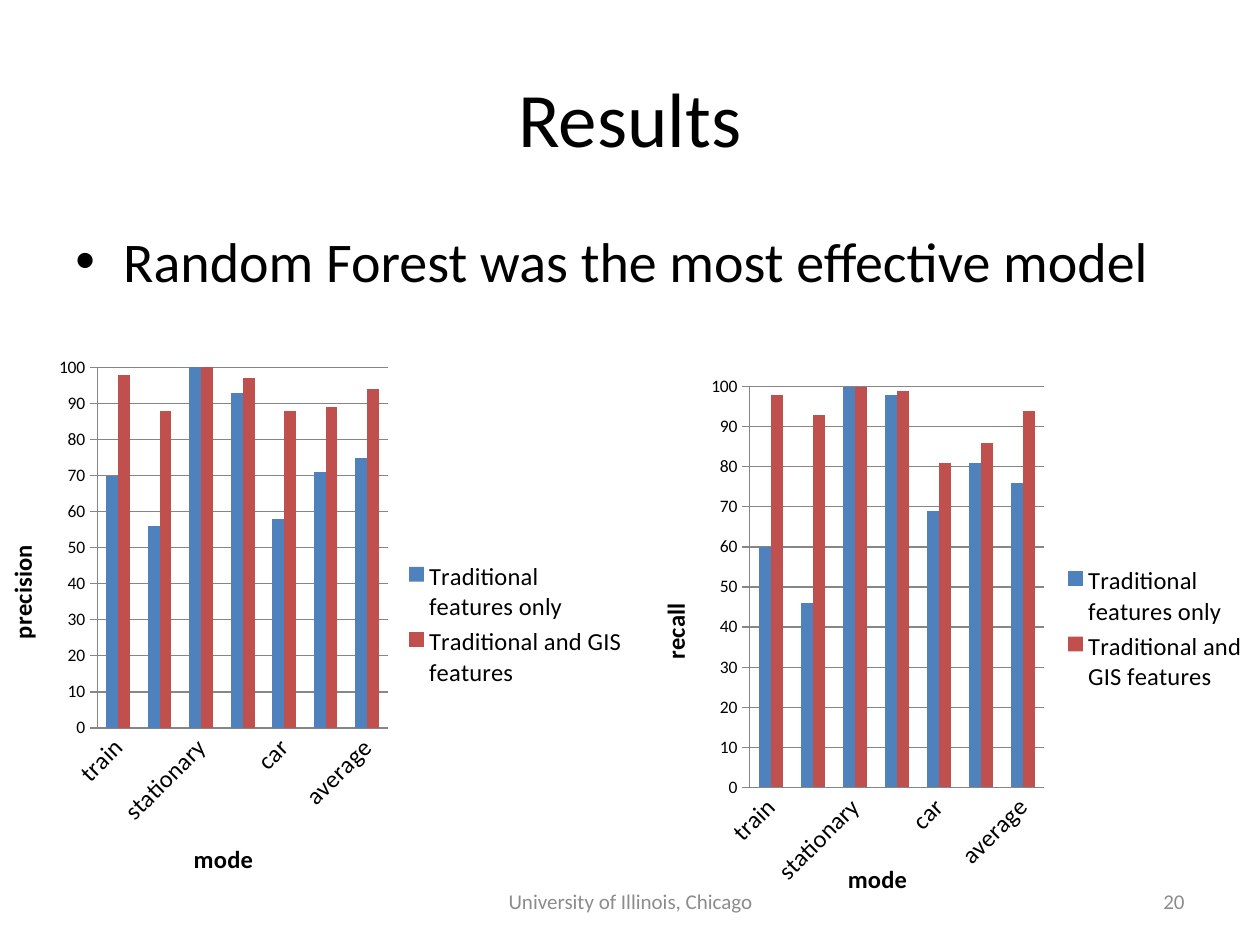
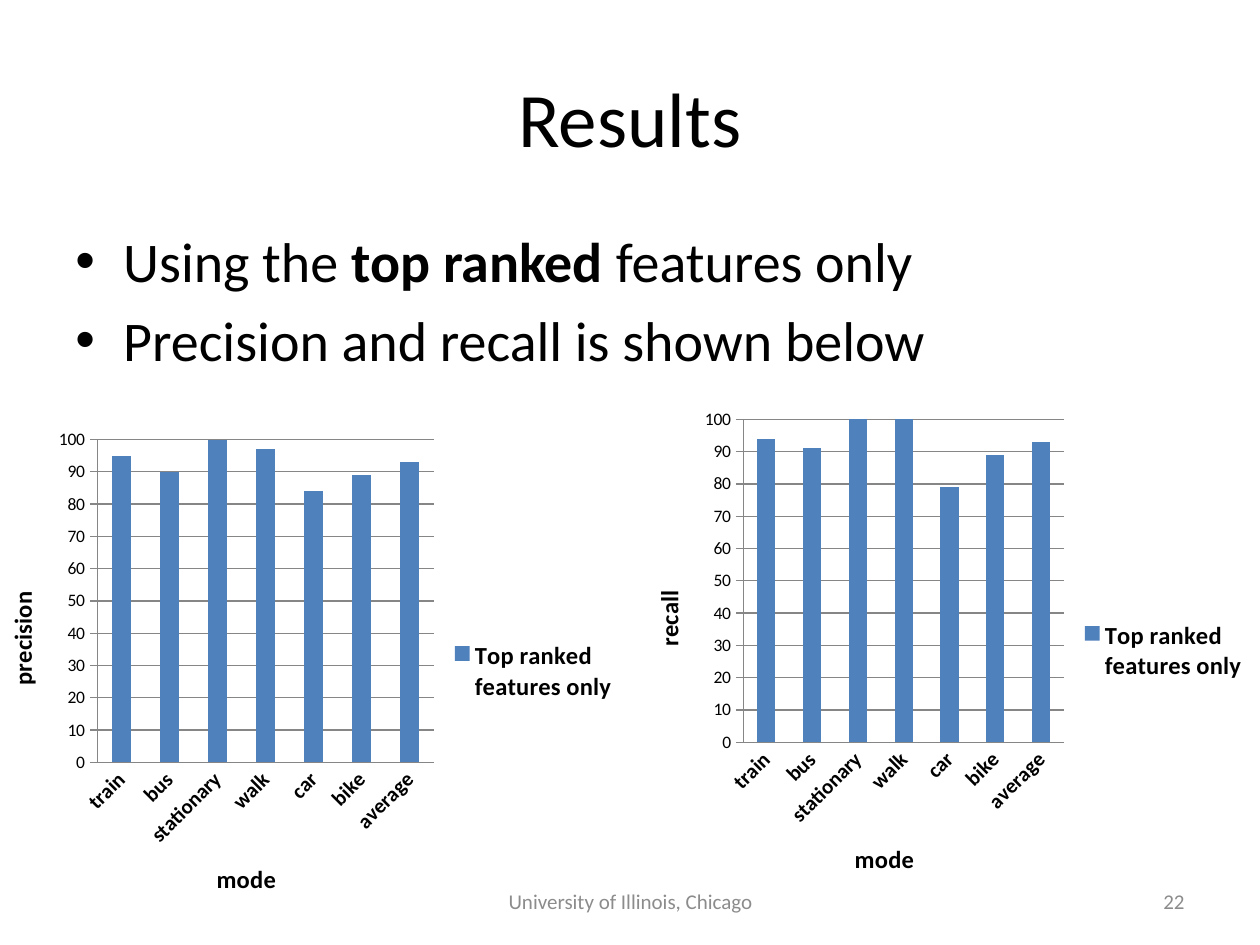
from dataclasses import dataclass

from lxml import etree
from pptx import Presentation
from pptx.chart.data import CategoryChartData
from pptx.dml.color import RGBColor
from pptx.enum.chart import XL_CHART_TYPE, XL_LEGEND_POSITION, XL_TICK_MARK
from pptx.enum.text import MSO_ANCHOR, PP_ALIGN
from pptx.oxml.ns import qn
from pptx.util import Inches, Pt

COLUMNS = XL_CHART_TYPE.COLUMN_CLUSTERED
LEGEND_RIGHT = XL_LEGEND_POSITION.RIGHT
TICK_NONE, TICK_OUTSIDE = XL_TICK_MARK.NONE, XL_TICK_MARK.OUTSIDE
TOP, MIDDLE = MSO_ANCHOR.TOP, MSO_ANCHOR.MIDDLE
LEFT, CENTER, RIGHT = PP_ALIGN.LEFT, PP_ALIGN.CENTER, PP_ALIGN.RIGHT


@dataclass(frozen=True)
class Theme:
    font: str = "Calibri"
    text: RGBColor = RGBColor(0, 0, 0)
    muted: RGBColor = RGBColor(0x8C, 0x8C, 0x8C)
    grid: RGBColor = RGBColor(0x86, 0x86, 0x86)
    series: tuple = (RGBColor(0x4F, 0x81, 0xBD), RGBColor(0xC0, 0x50, 0x4D))
    title_size: int = 44
    body_size: int = 32
    footer_size: int = 12
    chart_size: int = 10
    label_size: int = 14
    small_label_size: int = 12


THEME = Theme()
TITLE = "Results"
FOOTER = "University of Illinois, Chicago"
MODES = ["train", "bus", "stationary", "walk", "car", "bike", "average"]
TRADITIONAL = "Traditional features only"
WITH_GIS = "Traditional and GIS features"
TOP_RANKED = "Top ranked features only"

SLIDES = [
    {
        "number": "20",
        "bullets": [[("Random Forest was the most effective model", False)]],
        "category_size": THEME.label_size,
        "bold_labels": False,
        "charts": [
            {
                "measure": "precision",
                "box": (-0.17, 2.75, 5.25, 4.42),
                "series": {
                    TRADITIONAL: [70, 56, 100, 93, 58, 71, 75],
                    WITH_GIS: [98, 88, 100, 97, 88, 89, 94],
                },
            },
            {
                "measure": "recall",
                "box": (5, 2.83, 5, 4.33),
                "plot": {"x": 0.19, "y": 0.055, "w": 0.467, "h": 0.735},
                "series": {
                    TRADITIONAL: [60, 46, 100, 98, 69, 81, 76],
                    WITH_GIS: [98, 93, 100, 99, 81, 86, 94],
                },
            },
        ],
    },
    {
        "number": "22",
        "bullets": [
            [("Using the ", False), ("top ranked ", True), ("features only", False)],
            [("Precision and recall is shown below", False)],
        ],
        "category_size": THEME.small_label_size,
        "bold_labels": True,
        "charts": [
            {
                "measure": "precision",
                "box": (-0.17, 3.33, 5.17, 4),
                "series": {TOP_RANKED: [95, 90, 100, 97, 84, 89, 93]},
            },
            {
                "measure": "recall",
                "box": (4.96, 3.17, 5.04, 4),
                "series": {TOP_RANKED: [94, 91, 100, 100, 79, 89, 93]},
            },
        ],
    },
]


def place(shape, box):
    shape.left, shape.top, shape.width, shape.height = map(Inches, box)


def style_font(font, size, color=THEME.text, bold=False):
    font.name = THEME.font
    font.size = Pt(size)
    font.bold = bold
    font.color.rgb = color


def add_run(paragraph, text, size, color=THEME.text, bold=False):
    run = paragraph.add_run()
    run.text = text
    style_font(run.font, size, color, bold)


def add_text_box(slide, box, anchor):
    text_frame = slide.shapes.add_textbox(*map(Inches, box)).text_frame
    text_frame.word_wrap = True
    text_frame.vertical_anchor = anchor
    return text_frame


def add_title(slide):
    title = slide.shapes.title
    place(title, (0.5, 0.3, 9, 1.25))
    title.text_frame.vertical_anchor = MIDDLE
    paragraph = title.text_frame.paragraphs[0]
    paragraph.alignment = CENTER
    add_run(paragraph, TITLE, THEME.title_size)


def add_bullets(slide, bullets):
    text_frame = add_text_box(slide, (0.5, 1.75, 9, 4.95), TOP)
    for index, runs in enumerate(bullets):
        paragraph = text_frame.add_paragraph() if index else text_frame.paragraphs[0]
        paragraph.alignment = LEFT
        paragraph.space_before = Pt(THEME.body_size * 0.2)
        properties = paragraph._p.get_or_add_pPr()
        properties.set("marL", str(Inches(0.38)))
        properties.set("indent", str(-Inches(0.38)))
        etree.SubElement(properties, qn("a:buFont")).set("typeface", "Arial")
        etree.SubElement(properties, qn("a:buChar")).set("char", "•")
        for text, bold in runs:
            add_run(paragraph, text, THEME.body_size, bold=bold)


def add_footer(slide, number):
    for text, left, width, alignment in (
        (number, 7.17, 2.33, RIGHT),
        (FOOTER, 3.42, 3.17, CENTER),
    ):
        paragraph = add_text_box(slide, (left, 6.95, width, 0.4), MIDDLE).paragraphs[0]
        paragraph.alignment = alignment
        add_run(paragraph, text, THEME.footer_size, THEME.muted)


def rotate_text(text_element, degrees):
    body = text_element.find(qn("a:bodyPr"))
    body.set("rot", str(degrees * 60000))
    body.set("vert", "horz")


def style_line(line):
    line.color.rgb = THEME.grid
    line.width = Pt(0.75)


def style_axis(axis, title, label_size, bold, tick_mark):
    title_frame = axis.axis_title.text_frame
    add_run(title_frame.paragraphs[0], title, THEME.label_size, bold=True)
    style_font(axis.tick_labels.font, label_size, bold=bold)
    axis.major_tick_mark = tick_mark
    axis.minor_tick_mark = TICK_NONE
    style_line(axis.format.line)
    return title_frame


def set_plot_layout(plot, position):
    plot_area = plot._element.getparent()
    for old_layout in plot_area.findall(qn("c:layout")):
        plot_area.remove(old_layout)
    layout = etree.Element(qn("c:layout"))
    manual = etree.SubElement(layout, qn("c:manualLayout"))
    settings = {"layoutTarget": "inner", "xMode": "edge", "yMode": "edge", **position}
    for name, value in settings.items():
        etree.SubElement(manual, qn(f"c:{name}")).set("val", str(value))
    plot_area.insert(0, layout)


def add_mode_chart(slide, content, category_size, bold_labels):
    data = CategoryChartData()
    data.categories = MODES
    for name, values in content["series"].items():
        data.add_series(name, values)
    box = map(Inches, content["box"])
    chart = slide.shapes.add_chart(COLUMNS, *box, data).chart
    chart.has_title = False
    style_font(chart.font, THEME.chart_size)

    chart.has_legend = True
    chart.legend.position = LEGEND_RIGHT
    chart.legend.include_in_layout = False
    style_font(chart.legend.font, THEME.label_size, bold=bold_labels)

    category_axis, value_axis = chart.category_axis, chart.value_axis
    style_axis(category_axis, "mode", category_size, bold_labels, TICK_NONE)
    rotate_text(category_axis._element.find(qn("c:txPr")), -45)
    measure_frame = style_axis(
        value_axis, content["measure"], THEME.chart_size, False, TICK_OUTSIDE
    )
    rotate_text(measure_frame._txBody, -90)
    value_axis.minimum_scale, value_axis.maximum_scale = 0, 100
    value_axis.major_unit = 10
    value_axis.has_major_gridlines = True
    style_line(value_axis.major_gridlines.format.line)

    plot = chart.plots[0]
    plot.gap_width = 150
    plot.vary_by_categories = False
    for series, color in zip(plot.series, THEME.series):
        series.format.fill.solid()
        series.format.fill.fore_color.rgb = color
    if "plot" in content:
        set_plot_layout(plot, content["plot"])


def main():
    presentation = Presentation()
    presentation.slide_width, presentation.slide_height = Inches(10), Inches(7.5)
    title_only = presentation.slide_layouts.get_by_name("Title Only")
    for content in SLIDES:
        slide = presentation.slides.add_slide(title_only)
        add_title(slide)
        add_bullets(slide, content["bullets"])
        add_footer(slide, content["number"])
        for chart in content["charts"]:
            add_mode_chart(
                slide, chart, content["category_size"], content["bold_labels"]
            )
    presentation.save("out.pptx")


if __name__ == "__main__":
    main()
